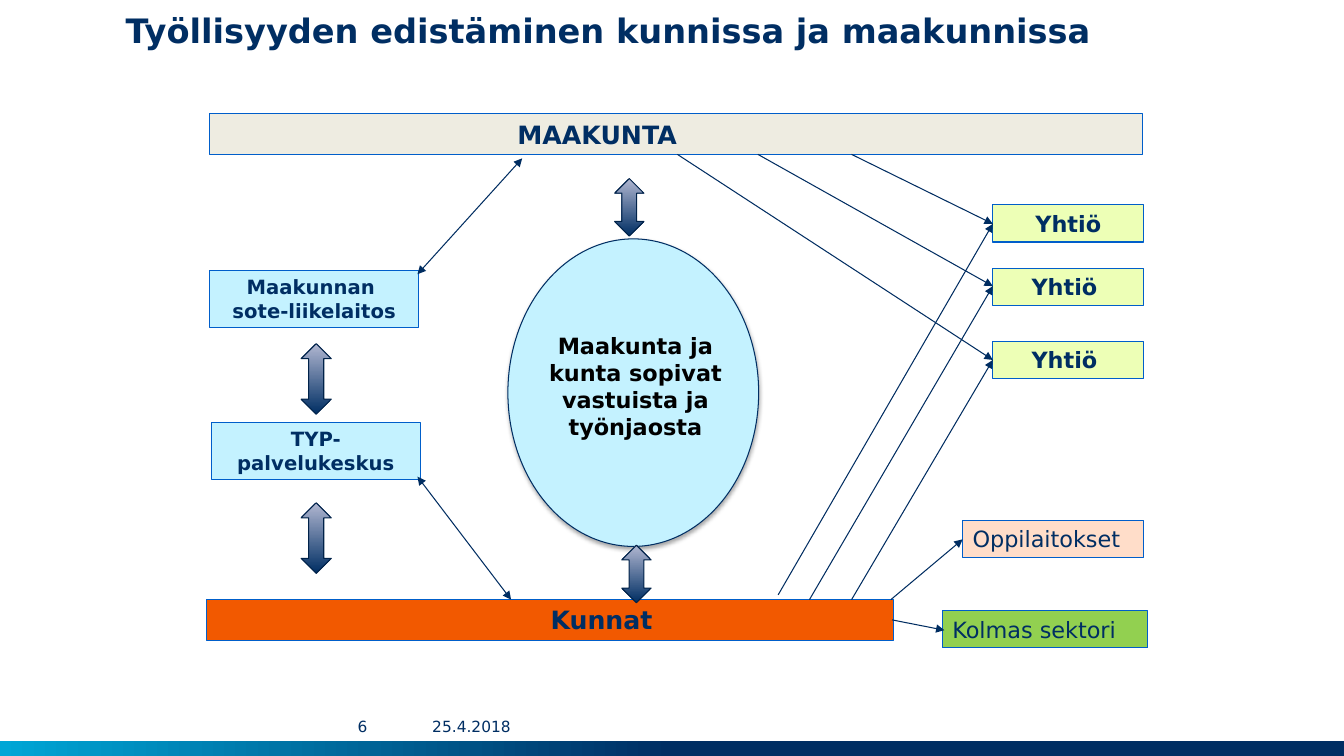
from lxml.etree import SubElement
from pptx import Presentation
from pptx.dml.color import RGBColor
from pptx.enum.shapes import MSO_CONNECTOR, MSO_SHAPE
from pptx.enum.text import MSO_ANCHOR, PP_ALIGN
from pptx.oxml import parse_xml
from pptx.oxml.ns import nsdecls, qn
from pptx.util import Cm, Pt

NAVY = RGBColor(0x00, 0x2E, 0x63)
CYAN = RGBColor(0x00, 0xA6, 0xD6)
LAVENDER = RGBColor(0xB1, 0xB7, 0xD1)
BLACK = RGBColor(0x00, 0x00, 0x00)
BOX_LINE = RGBColor(0x00, 0x5E, 0xCA)
LINK_LINE = RGBColor(0x00, 0x2D, 0x61)
ARROW_LINE = RGBColor(0x00, 0x22, 0x49)
BEIGE = RGBColor(0xEE, 0xEC, 0xE1)
PALE_BLUE = RGBColor(0xC4, 0xF2, 0xFF)
LIME = RGBColor(0xED, 0xFF, 0xB6)
ORANGE = RGBColor(0xF2, 0x59, 0x00)
PEACH = RGBColor(0xFF, 0xDD, 0xC9)
GREEN = RGBColor(0x92, 0xD0, 0x50)
LEFT, CENTER = PP_ALIGN.LEFT, PP_ALIGN.CENTER
INSET = 0.25


def write(shape, text, size, bold, align, color=NAVY):
    frame = shape.text_frame
    frame.word_wrap = True
    frame.vertical_anchor = MSO_ANCHOR.TOP
    for index, line in enumerate(text.split("\n")):
        paragraph = frame.add_paragraph() if index else frame.paragraphs[0]
        paragraph.alignment = align
        run = paragraph.add_run()
        run.text = line
        run.font.name = "DejaVu Sans"
        run.font.size = Pt(size)
        run.font.bold = bold
        run.font.color.rgb = color


def paint_gradient(shape, angle, stops):
    shape.shadow.inherit = False
    shape.fill.gradient()
    shape.fill.gradient_angle = angle
    for stop, (position, color) in zip(shape.fill.gradient_stops, stops):
        stop.position = position
        stop.color.rgb = color


presentation = Presentation()
presentation.slide_width = Cm(33.87)
presentation.slide_height = Cm(19.05)
slide = presentation.slides.add_slide(presentation.slide_layouts[6])
shapes = slide.shapes

footer_bar = shapes.add_shape(MSO_SHAPE.RECTANGLE, 0, Cm(18.67), Cm(33.87), Cm(0.4))
paint_gradient(footer_bar, 180, [(0.5, NAVY), (1, CYAN)])
footer_bar.line.fill.background()

title = shapes.add_textbox(Cm(2.92), Cm(0.13), Cm(27.81), Cm(2.13))
write(title, "Työllisyyden edistäminen kunnissa ja maakunnissa", 24, True, LEFT)

for text, left, width in [("6", 8.41, 1.45), ("25.4.2018", 10.21, 3.35)]:
    footer = shapes.add_textbox(Cm(left), Cm(17.93), Cm(width), Cm(0.74))
    write(footer, text, 11, False, CENTER)
    frame = footer.text_frame
    frame.margin_left = frame.margin_right = frame.margin_top = frame.margin_bottom = 0
    frame.vertical_anchor = MSO_ANCHOR.MIDDLE

ellipse = shapes.add_shape(MSO_SHAPE.OVAL, Cm(12.8), Cm(6.02), Cm(6.32), Cm(7.75))
ellipse.fill.solid()
ellipse.fill.fore_color.rgb = PALE_BLUE
ellipse.line.color.rgb = NAVY
ellipse.line.width = Pt(0.75)
ellipse._element.spPr.append(parse_xml(
    f'<a:effectLst {nsdecls("a")}>'
    f'<a:outerShdw blurRad="{Pt(3.1)}" dist="{Pt(1.8)}" dir="5400000" rotWithShape="0">'
    '<a:srgbClr val="000000"><a:alpha val="35000"/></a:srgbClr>'
    '</a:outerShdw></a:effectLst>'))

agreement = shapes.add_textbox(Cm(13.46), Cm(8.25), Cm(5.11), Cm(3))
write(agreement, "Maakunta ja kunta sopivat vastuista ja työnjaosta", 16, True, CENTER, BLACK)

boxes = [
    ("MAAKUNTA", 5.28, 2.87, 23.52, 1.02, BEIGE, 18, True, LEFT, 7.76),
    ("Maakunnan \nsote-liikelaitos", 5.28, 6.81, 5.28, 1.45, PALE_BLUE, 14, True, CENTER, INSET),
    ("TYP-palvelukeskus", 5.33, 10.64, 5.26, 1.45, PALE_BLUE, 14, True, CENTER, INSET),
    (" Yhtiö ", 25.02, 5.16, 3.81, 0.94, LIME, 16, True, CENTER, INSET),
    ("Yhtiö ", 25.02, 6.76, 3.81, 0.94, LIME, 16, True, CENTER, INSET),
    ("Yhtiö ", 25.02, 8.61, 3.81, 0.94, LIME, 16, True, CENTER, INSET),
    ("Kunnat", 5.21, 15.11, 17.3, 1.02, ORANGE, 18, True, CENTER, 2.85),
    ("Oppilaitokset", 24.26, 13.11, 4.57, 0.94, PEACH, 16, False, LEFT, INSET),
    ("Kolmas sektori", 23.75, 15.39, 5.18, 0.94, GREEN, 16, False, LEFT, INSET),
]
for text, left, top, width, height, color, size, bold, align, margin in boxes:
    box = shapes.add_shape(MSO_SHAPE.RECTANGLE, Cm(left), Cm(top), Cm(width), Cm(height))
    box.shadow.inherit = False
    box.fill.solid()
    box.fill.fore_color.rgb = color
    box.line.color.rgb = BOX_LINE
    box.line.width = Pt(0.75)
    write(box, text, size, bold, align)
    box.text_frame.margin_left = Cm(margin)

links = [
    (22.45, 15.11, 24.26, 13.59, ["tailEnd"]),
    (22.48, 15.62, 23.8, 15.88, ["tailEnd"]),
    (10.52, 6.91, 13.16, 3.99, ["headEnd", "tailEnd"]),
    (10.52, 12.01, 12.88, 15.11, ["headEnd", "tailEnd"]),
]
company_links = [(5.64, 21.46, 19.61, 14.99), (7.21, 19.1, 20.4, 15.11), (9.07, 17.07, 21.46, 15.11)]
for company_y, region_x, town_x, town_y in company_links:
    links.append((region_x, 3.89, 25.02, company_y, ["tailEnd"]))
    links.append((town_x, town_y, 25.02, company_y, ["tailEnd"]))
for start_x, start_y, end_x, end_y, arrowheads in links:
    link = shapes.add_connector(
        MSO_CONNECTOR.STRAIGHT, Cm(start_x), Cm(start_y), Cm(end_x), Cm(end_y))
    link.line.color.rgb = LINK_LINE
    link.line.width = Pt(0.75)
    for arrowhead in arrowheads:
        SubElement(link.line._get_or_add_ln(), qn(f"a:{arrowhead}"), type="triangle")
    SubElement(link._element.spPr, qn("a:effectLst"))

block_arrows = [
    (7.59, 8.66, 0.76, 1.78),
    (7.59, 12.67, 0.76, 1.78),
    (15.49, 4.5, 0.74, 1.45),
    (15.67, 13.74, 0.74, 1.45),
]
for position in block_arrows:
    arrow = shapes.add_shape(MSO_SHAPE.UP_DOWN_ARROW, *map(Cm, position))
    paint_gradient(arrow, 90, [(0, NAVY), (1, LAVENDER)])
    arrow.line.color.rgb = ARROW_LINE
    arrow.line.width = Pt(0.75)

presentation.save("out.pptx")
